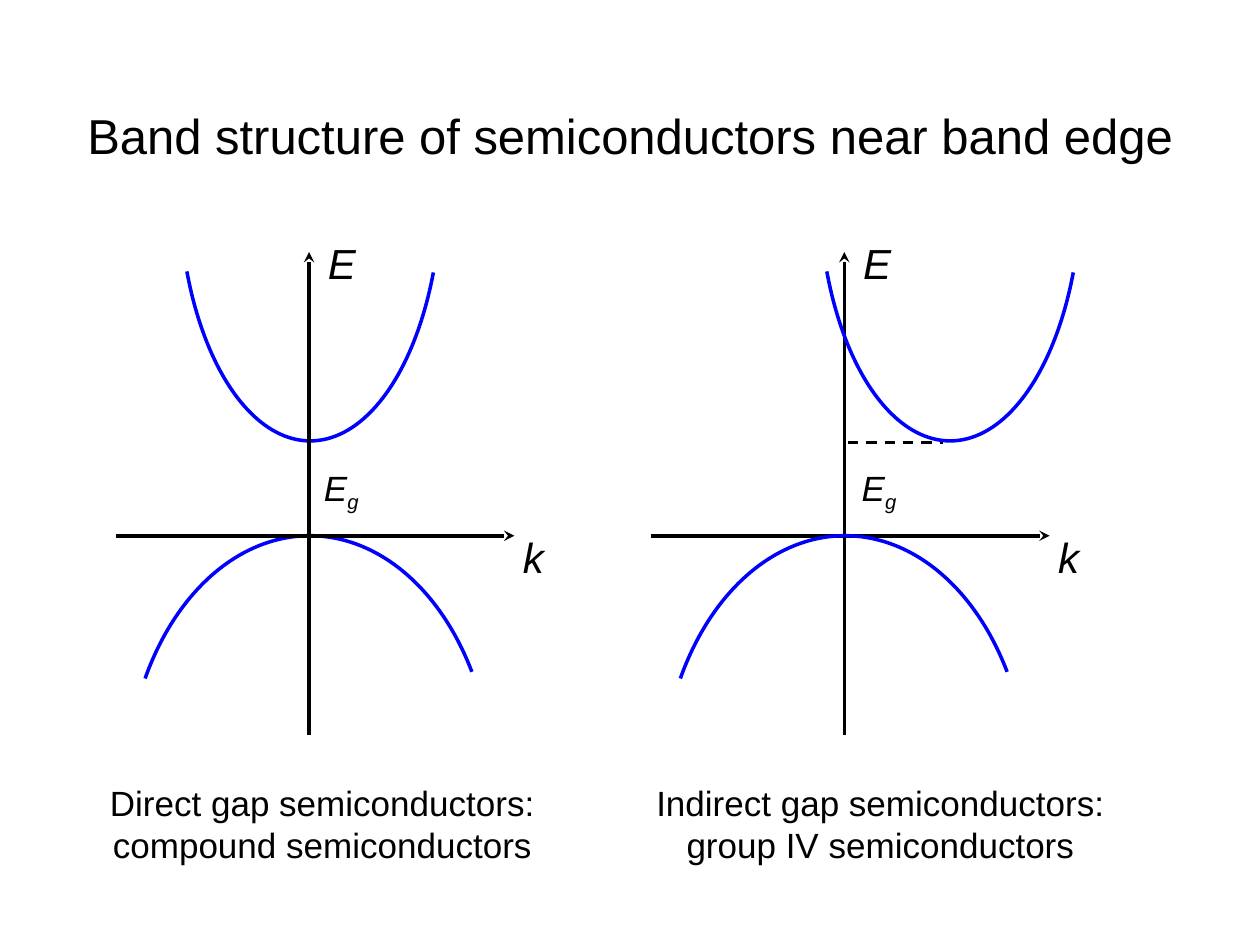
from dataclasses import dataclass

from lxml import etree
from pptx import Presentation
from pptx import util as u
from pptx.dml.color import RGBColor
from pptx.enum import dml, shapes, text
from pptx.oxml.ns import qn


@dataclass(frozen=True)
class Theme:
    font: str = "Arial"
    ink: RGBColor = RGBColor(0, 0, 0)
    band: RGBColor = RGBColor(0, 0, 255)
    title: int = 28
    axis: int = 24
    body: int = 20
    stroke: float = 2
    dash: float = 1.5


THEME = Theme()


def add_label(slide, box, lines, size, align=None, italic=False, wrap=False):
    frame = slide.shapes.add_textbox(*map(u.Cm, box)).text_frame
    frame.word_wrap = wrap
    for index, words in enumerate(lines):
        paragraph = frame.paragraphs[0] if index == 0 else frame.add_paragraph()
        paragraph.alignment = align
        for word, baseline in words:
            run = paragraph.add_run()
            run.text = word
            run.font.name = THEME.font
            run.font.size = u.Pt(size)
            run.font.italic = italic
            run.font.color.rgb = THEME.ink
            if baseline:
                run.font._element.set("baseline", str(baseline * 1000))
    return frame


def add_line(slide, start, end, width, arrow=False):
    line = slide.shapes.add_connector(
        shapes.MSO_CONNECTOR.STRAIGHT, *map(u.Cm, (*start, *end)))
    line.line.color.rgb = THEME.ink
    line.line.width = u.Pt(width)
    if arrow:
        etree.SubElement(line.line._get_or_add_ln(), qn("a:tailEnd"), type="stealth")
    else:
        line.line.dash_style = dml.MSO_LINE.DASH
    etree.SubElement(line._element.spPr, qn("a:effectLst"))


def add_band(slide, box, start_degrees, end_degrees):
    band = slide.shapes.add_shape(shapes.MSO_SHAPE.ARC, *map(u.Cm, box))
    band.shadow.inherit = False
    band.fill.background()
    band.line.color.rgb = THEME.band
    band.line.width = u.Pt(THEME.stroke)
    band.adjustments[0] = start_degrees * 0.6
    band.adjustments[1] = end_degrees * 0.6


def add_axes(slide, left, top):
    origin_x, origin_y = left + 3.89, top + 5.72
    add_line(slide, (left, origin_y), (left + 8.03, origin_y), THEME.stroke, True)
    add_line(slide, (origin_x, top + 9.73), (origin_x, top), THEME.stroke, True)
    add_label(slide, (left + 7.95, origin_y - 0.21, 0.94, 1.27),
              [[("k", 0)]], THEME.axis, italic=True)
    add_label(slide, (origin_x + 0.13, top - 0.42, 1.09, 1.27),
              [[("E", 0)]], THEME.axis, italic=True)


def add_bands(slide, left, top, conduction_left):
    add_band(slide, (left + 0.2, top + 5.72, 7.41, 10.37), 214.79, 323.26)
    add_band(slide, (left + conduction_left, top - 6.56, 5.29, 10.37), 35.77, 144.59)


def add_band_diagram(slide, left, top, caption, caption_box, gap_left, indirect):
    conduction_left = 3.38 if indirect else 1.27
    if indirect:
        add_axes(slide, left, top)
        add_line(slide, (left + 3.96, top + 3.84), (left + 5.87, top + 3.84), THEME.dash)
    add_bands(slide, left, top, conduction_left)
    if not indirect:
        add_axes(slide, left, top)
    add_label(slide, (left + gap_left, top + 4.19, 1.24, 1.12),
              [[("E", 0), ("g", -25)]], THEME.body, italic=True)
    caption_left, caption_width = caption_box
    add_label(slide, (left + caption_left, top + 10.54, caption_width, 1.96),
              [[(line, 0)] for line in caption], THEME.body, text.PP_ALIGN.CENTER)


def add_title(slide, box, title):
    frame = add_label(slide, box, [[(title, 0)]], THEME.title,
                      text.PP_ALIGN.CENTER, wrap=True)
    frame.vertical_anchor = text.MSO_ANCHOR.MIDDLE


def main():
    deck = Presentation()
    deck.slide_width, deck.slide_height = u.Cm(25.4), u.Cm(19.05)
    slide = deck.slides.add_slide(deck.slide_layouts[6])
    add_title(slide, (1.27, 1.35, 22.86, 2.74),
              "Band structure of semiconductors near band edge")
    add_band_diagram(slide, 2.34, 5.08,
                     ("Direct gap semiconductors:", "compound semiconductors"),
                     (-0.41, 9.14), 3.94, indirect=False)
    add_band_diagram(slide, 13.13, 5.08,
                     ("Indirect gap semiconductors:", "group IV semiconductors"),
                     (-0.18, 9.6), 3.99, indirect=True)
    deck.save("out.pptx")


if __name__ == "__main__":
    main()
